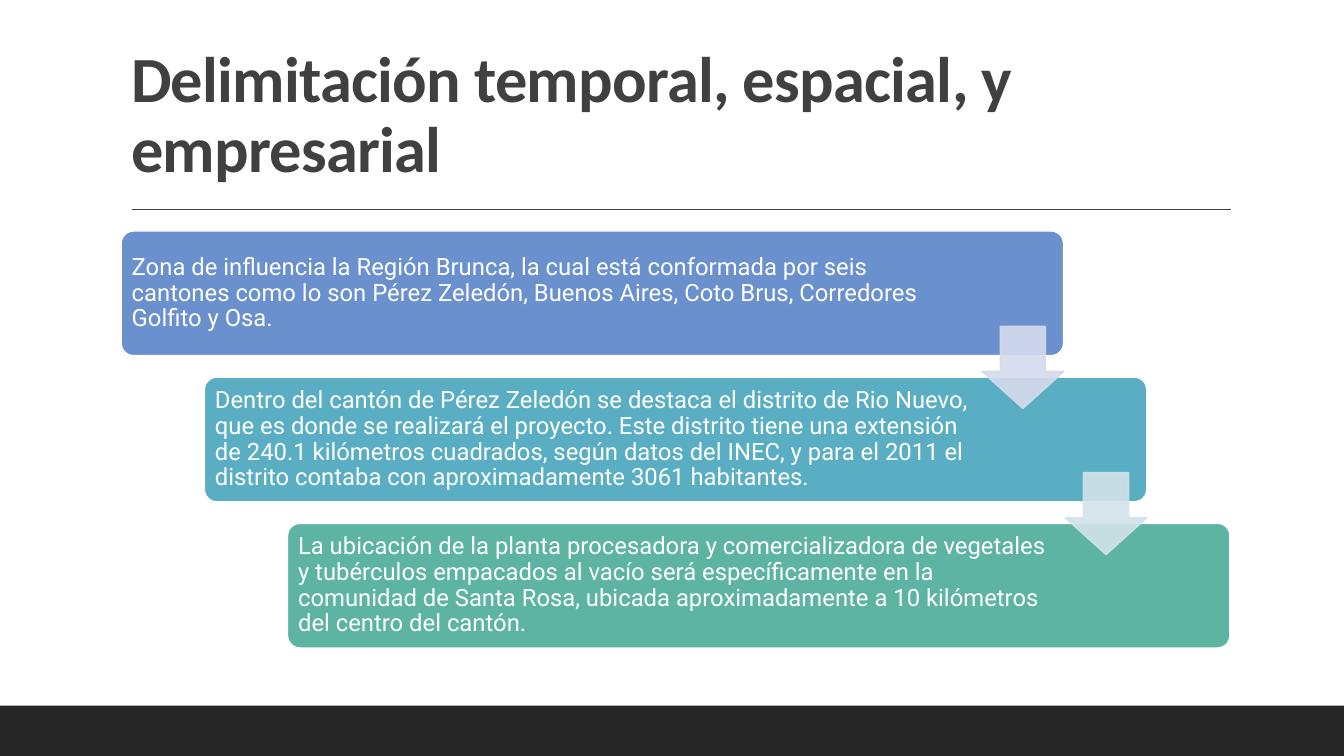
from lxml import etree
from pptx import Presentation
from pptx.dml.color import RGBColor
from pptx.enum.shapes import MSO_CONNECTOR, MSO_SHAPE
from pptx.enum.text import MSO_ANCHOR, MSO_AUTO_SIZE, PP_ALIGN
from pptx.oxml.ns import qn
from pptx.util import Inches, Pt

RECTANGLE, ROUNDED = MSO_SHAPE.RECTANGLE, MSO_SHAPE.ROUNDED_RECTANGLE
DOWN_ARROW = MSO_SHAPE.DOWN_ARROW
STRAIGHT = MSO_CONNECTOR.STRAIGHT
LEFT = PP_ALIGN.LEFT
MIDDLE, BOTTOM = MSO_ANCHOR.MIDDLE, MSO_ANCHOR.BOTTOM
NO_AUTOFIT = MSO_AUTO_SIZE.NONE
DARK, WHITE, BLACK_BAND = "404040", "FFFFFF", "262626"

STEPS = [
    ("6A90CE", 1.33, "Zona de influencia la Región Brunca, la cual está conformada por seis "
     "cantones como lo son Pérez Zeledón, Buenos Aires, Coto Brus, Corredores Golfito y Osa."),
    ("5AAEC3", 1.7, "Dentro del cantón de Pérez Zeledón se destaca el distrito de Rio Nuevo, "
     "que es donde se realizará el proyecto. Este distrito tiene una extensión de 240.1 "
     "kilómetros cuadrados, según datos del INEC, y para el 2011 el distrito contaba con "
     "aproximadamente 3061 habitantes."),
    ("5DB4A2", 1.7, "La ubicación de la planta procesadora y comercializadora de vegetales y "
     "tubérculos empacados al vacío será específicamente en la comunidad de Santa Rosa, "
     "ubicada aproximadamente a 10 kilómetros del centro del cantón."),
]
ARROW_COLORS = ["D4DBED", "D2E3E9"]
STEP_X, STEP_Y = 0.825, 1.45


def write(box, text, font, size, color, anchor, margins, bold=False, spacing=0):
    frame = box.text_frame
    frame.word_wrap = True
    frame.auto_size = NO_AUTOFIT
    frame.vertical_anchor = anchor
    frame.margin_left, frame.margin_top, frame.margin_right, frame.margin_bottom = map(Inches, margins)
    para = frame.paragraphs[0]
    para.alignment = LEFT
    para.line_spacing = 0.9
    span = para.add_run()
    span.text = text
    span.font.name = font
    span.font.size = Pt(size)
    span.font.bold = bold
    span.font.color.rgb = RGBColor.from_string(color)
    span.font._element.set("spc", str(spacing))


def add_box(kind, left, top, width, height, fill, line=None, alpha=100):
    box = slide.shapes.add_shape(kind, Inches(left), Inches(top), Inches(width), Inches(height))
    box.shadow.inherit = False
    box.fill.solid()
    box.fill.fore_color.rgb = RGBColor.from_string(fill)
    if line:
        box.line.color.rgb = RGBColor.from_string(line)
        box.line.width = Pt(1.25)
    else:
        box.line.fill.background()
    if alpha < 100:
        for color in box._element.spPr.iter(qn("a:srgbClr")):
            etree.SubElement(color, qn("a:alpha")).set("val", str(alpha * 1000))
    return box


deck = Presentation()
deck.slide_width, deck.slide_height = Inches(13.33), Inches(7.5)
slide = deck.slides.add_slide(deck.slide_layouts[5])

title = slide.shapes.title
title.left, title.top, title.width, title.height = map(Inches, (1.2, 0.31, 11, 1.59))
write(title, "Delimitación temporal, espacial, y empresarial", font="Calibri", size=46, color=DARK,
      anchor=BOTTOM, margins=(0.1, 0.05, 0.1, 0.05), bold=True, spacing=-50)

rule = slide.shapes.add_connector(STRAIGHT, Inches(1.31), Inches(2.08), Inches(12.21), Inches(2.08))
rule.line.color.rgb = RGBColor.from_string(DARK)
rule.line.width = Pt(1)
etree.SubElement(rule._element.spPr, qn("a:effectLst"))

add_box(RECTANGLE, 0, 7, 13.33, 0.5, BLACK_BAND)

for index, (fill, right_margin, text) in enumerate(STEPS):
    card = add_box(ROUNDED, 1.2 + index * STEP_X, 2.29 + index * STEP_Y, 9.35, 1.24, fill, WHITE)
    card.adjustments[0] = 0.1
    write(card, text, font="Roboto", size=17, color=WHITE, anchor=MIDDLE,
          margins=(0.07, 0.07, right_margin, 0.07))

for index, color in enumerate(ARROW_COLORS):
    arrow = add_box(DOWN_ARROW, 9.74 + index * STEP_X, 3.24 + index * STEP_Y, 0.81, 0.81,
                    color, color, alpha=90)
    arrow.adjustments[0], arrow.adjustments[1] = 0.55, 0.45

deck.save("out.pptx")
